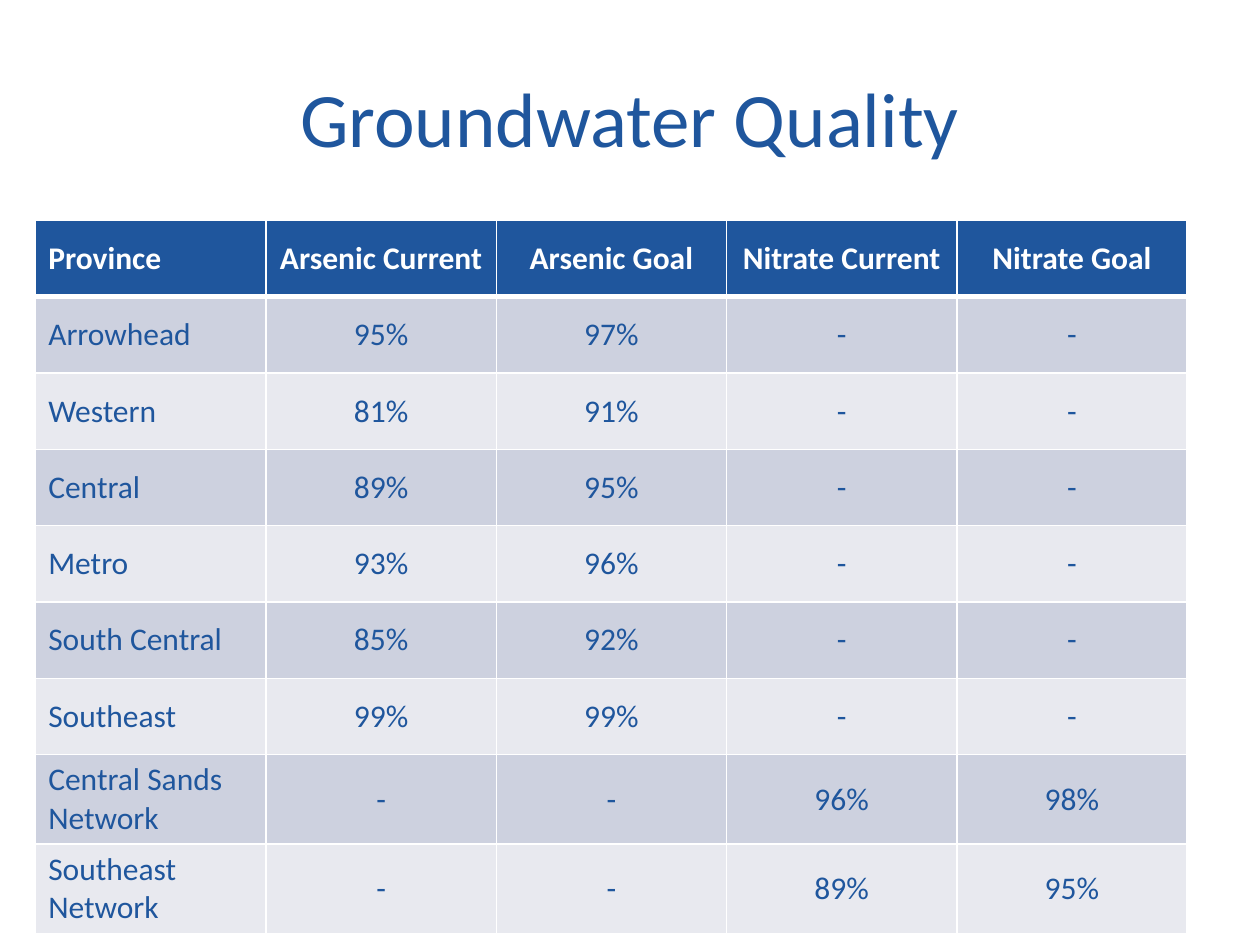
from dataclasses import dataclass

from lxml.etree import SubElement
from pptx import Presentation
from pptx.dml.color import RGBColor as RGB
from pptx.enum.text import MSO_ANCHOR as Anchor, PP_ALIGN as Align
from pptx.oxml.ns import qn
from pptx.util import Pt

# Content
TITLE = "Groundwater Quality"
HEAD = ("Province", "Arsenic Current", "Arsenic Goal", "Nitrate Current", "Nitrate Goal")
ROWS = [
    ("Arrowhead", "95%", "97%", "-", "-"),
    ("Western", "81%", "91%", "-", "-"),
    ("Central", "89%", "95%", "-", "-"),
    ("Metro", "93%", "96%", "-", "-"),
    ("South Central", "85%", "92%", "-", "-"),
    ("Southeast", "99%", "99%", "-", "-"),
    ("Central Sands Network", "-", "-", "96%", "98%"),
    ("Southeast Network", "-", "-", "89%", "95%"),
]


@dataclass(frozen=True)
class Theme:
    font: str = "Calibri"
    blue: str = "1F569D"
    white: str = "FFFFFF"
    bands: tuple = ("CDD1DF", "E8E9EF")
    title: float = 44
    body: float = 18
    thin: float = 1
    thick: float = 3


THEME = Theme()

# Layout in points
LEFT, TOP = 20.4, 126
COL, ROW = 131.6, 43.6


def write(frame, text, size=THEME.body, color=THEME.blue, bold=False, align=Align.CENTER):
    para = frame.paragraphs[0]
    para.alignment = align
    run = para.add_run()
    run.text = text
    font = run.font
    font.name, font.size, font.bold = THEME.font, Pt(size), bold
    font.color.rgb = RGB.from_string(color)


def edge(cell, side, width):
    line = SubElement(cell._tc.get_or_add_tcPr(), qn(f"a:ln{side}"), w=str(Pt(width)))
    fill = SubElement(line, qn("a:solidFill"))
    SubElement(fill, qn("a:srgbClr"), val=THEME.white)


def style(cell, row):
    # Borders precede the fill in the cell properties
    heavy = {0: "B", 1: "T"}.get(row)
    for side in "LRTB":
        edge(cell, side, THEME.thick if side == heavy else THEME.thin)
    cell.fill.solid()
    color = THEME.bands[(row - 1) % 2] if row else THEME.blue
    cell.fill.fore_color.rgb = RGB.from_string(color)
    cell.vertical_anchor = Anchor.MIDDLE


def main():
    deck = Presentation()
    deck.slide_width, deck.slide_height = Pt(720), Pt(540)
    slide = deck.slides.add_slide(deck.slide_layouts[5])

    # Title
    title = slide.shapes.title
    title.left, title.top, title.width, title.height = Pt(36), Pt(21.6), Pt(648), Pt(90)
    title.text_frame.vertical_anchor = Anchor.MIDDLE
    write(title.text_frame, TITLE, size=THEME.title)

    # Table
    data = [HEAD, *ROWS]
    table = slide.shapes.add_table(
        len(data), len(HEAD), Pt(LEFT), Pt(TOP),
        Pt(COL * len(HEAD)), Pt(ROW * len(data))).table
    for col in table.columns:
        col.width = Pt(COL)
    for i, texts in enumerate(data):
        table.rows[i].height = Pt(ROW)
        for j, text in enumerate(texts):
            cell = table.cell(i, j)
            style(cell, i)
            write(cell.text_frame, text, bold=i == 0,
                  color=THEME.blue if i else THEME.white,
                  align=Align.CENTER if j else Align.LEFT)

    deck.save("out.pptx")


if __name__ == "__main__":
    main()
